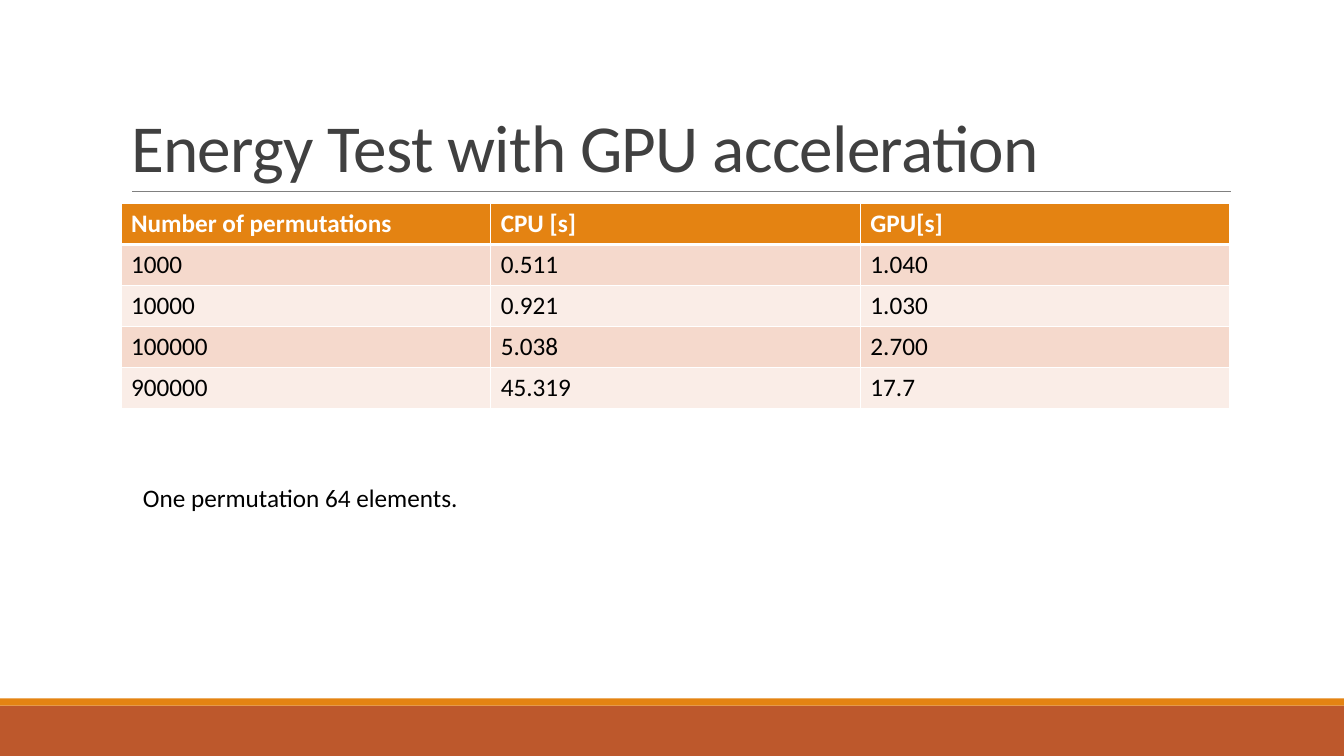
"""Build the slide comparing CPU and GPU times of the energy test."""
from lxml.etree import SubElement
from pptx import Presentation
from pptx.dml.color import RGBColor
from pptx.enum.shapes import MSO_CONNECTOR, MSO_SHAPE
from pptx.enum.text import MSO_ANCHOR, MSO_AUTO_SIZE, PP_ALIGN
from pptx.oxml.ns import qn
from pptx.util import Inches, Pt

TITLE = "Energy Test with GPU acceleration"
NOTE = "One permutation 64 elements."
TIMES = [
    ("Number of permutations", "CPU [s]", "GPU[s]"),
    ("1000", "0.511", "1.040"),
    ("10000", "0.921", "1.030"),
    ("100000", "5.038", "2.700"),
    ("900000", "45.319", "17.7"),
]
COLORS = {
    "rust": "BD582C", "orange": "E48312", "rule": "808080", "title": "404040",
    "text": "000000", "white": "FFFFFF", "band_dark": "F5D9CC", "band_light": "FAEDE7",
}
BANDS = [(7, 0.5, "rust"), (6.93, 0.07, "orange")]
FONT = "Calibri"
LEFT, WIDTH = 1.2, 11
TABLE_H = 2.03


def rgb(name):
    return RGBColor.from_string(COLORS[name])


def style(p, size, color, bold=False):
    for r in p.runs:
        r.font.name = FONT
        r.font.size = Pt(size)
        r.font.bold = bold
        r.font.color.rgb = rgb(color)


def add_borders(cell, top, bottom):
    tcPr = cell._tc.get_or_add_tcPr()
    for side, width in (("lnL", 1), ("lnR", 1), ("lnT", top), ("lnB", bottom)):
        ln = SubElement(tcPr, qn(f"a:{side}"), w=str(Pt(width)))
        fill = SubElement(ln, qn("a:solidFill"))
        SubElement(fill, qn("a:srgbClr"), val=COLORS["white"])


def add_bands(s):
    for top, height, color in BANDS:
        sp = s.shapes.add_shape(MSO_SHAPE.RECTANGLE, 0, Inches(top), Inches(13.33), Inches(height))
        sp.shadow.inherit = False
        sp.fill.solid()
        sp.fill.fore_color.rgb = rgb(color)
        sp.line.fill.background()


def add_title(s):
    rule = s.shapes.add_connector(
        MSO_CONNECTOR.STRAIGHT, Inches(1.31), Inches(1.9), Inches(12.21), Inches(1.9))
    rule.line.color.rgb = rgb("rule")
    rule.line.width = Pt(0.5)
    SubElement(rule._element.spPr, qn("a:effectLst"))
    title = s.shapes.title
    title.left, title.top = Inches(LEFT), Inches(0.31)
    title.width, title.height = Inches(WIDTH), Inches(1.59)
    tf = title.text_frame
    tf.text = TITLE
    tf.auto_size = MSO_AUTO_SIZE.NONE
    tf.vertical_anchor = MSO_ANCHOR.BOTTOM
    p = tf.paragraphs[0]
    p.alignment = PP_ALIGN.LEFT
    p.line_spacing = 0.85
    style(p, 48, "title")
    p.runs[0].font._element.set("spc", "-50")


def add_times(s):
    table = s.shapes.add_table(
        len(TIMES), len(TIMES[0]), Inches(LEFT), Inches(2.02),
        Inches(WIDTH), Inches(TABLE_H)).table
    for i, row in enumerate(TIMES):
        header = i == 0
        band = "orange" if header else ("band_light", "band_dark")[i % 2]
        for j, value in enumerate(row):
            cell = table.cell(i, j)
            cell.text = value
            style(cell.text_frame.paragraphs[0], 18, "white" if header else "text", header)
            add_borders(cell, 3 if i == 1 else 1, 3 if header else 1)
            cell.fill.solid()
            cell.fill.fore_color.rgb = rgb(band)


def add_note(s):
    tf = s.shapes.add_textbox(Inches(1.32), Inches(4.74), Inches(9.76), Inches(0.4)).text_frame
    tf.word_wrap = True
    tf.auto_size = MSO_AUTO_SIZE.SHAPE_TO_FIT_TEXT
    tf.text = NOTE
    style(tf.paragraphs[0], 18, "text")


def main():
    prs = Presentation()
    prs.slide_width, prs.slide_height = Inches(13.33), Inches(7.5)
    s = prs.slides.add_slide(prs.slide_layouts[5])
    add_bands(s)
    add_title(s)
    add_times(s)
    add_note(s)
    prs.save("out.pptx")


if __name__ == "__main__":
    main()
